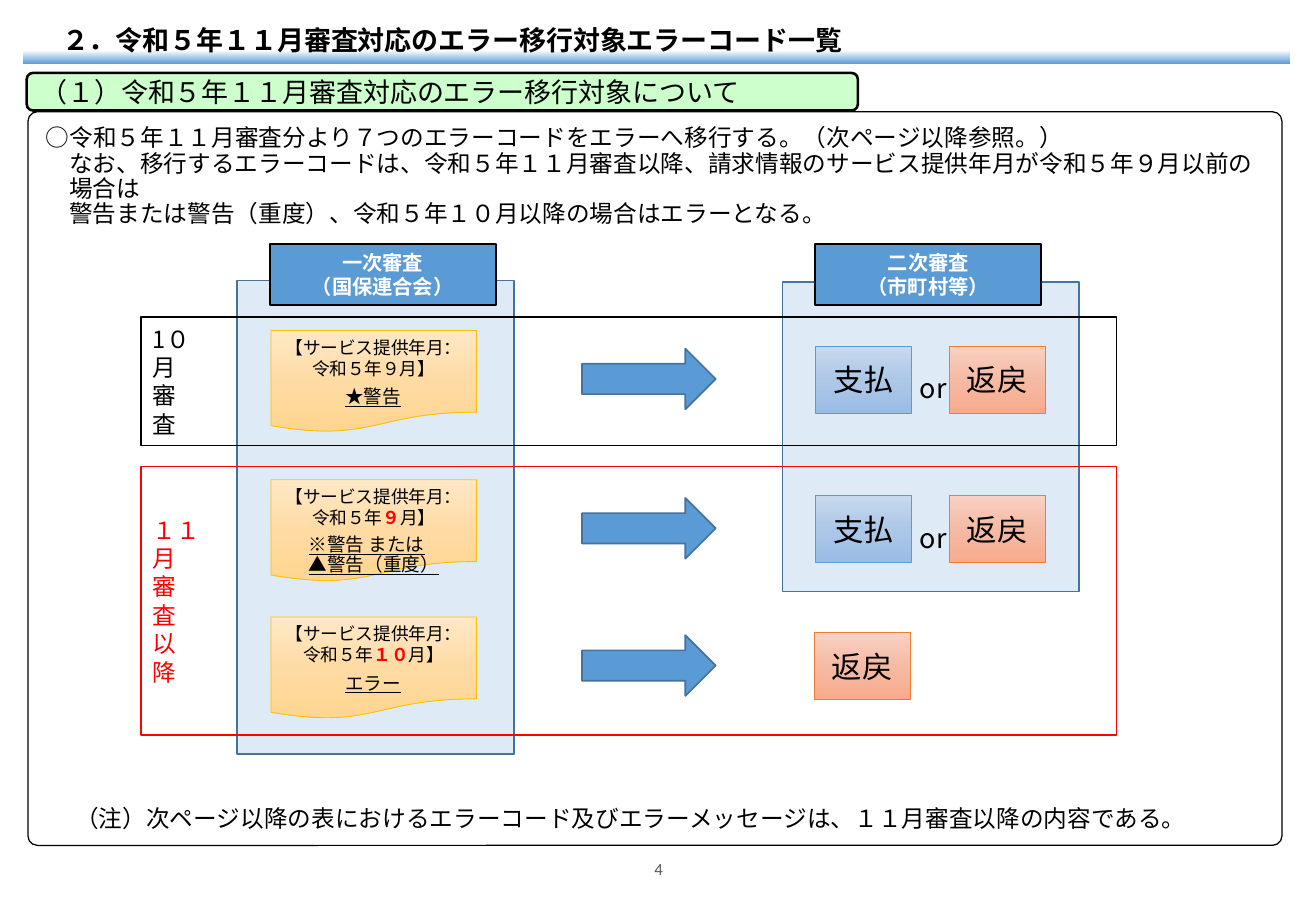
from copy import deepcopy
from dataclasses import dataclass, replace
from typing import Optional, Union

from lxml.etree import SubElement
from pptx import Presentation
from pptx.dml.color import RGBColor
from pptx.enum.shapes import MSO_SHAPE
from pptx.enum.text import MSO_ANCHOR, MSO_AUTO_SIZE, PP_ALIGN
from pptx.oxml.ns import qn
from pptx.util import Inches, Pt

CJK = "Noto Sans CJK JP"
RED = "FF0000"
SKY = "5B9BD5"
EDGE = "43739E"
PALE = "DEEBF7"
GOLD = ((0, "FFE8C7"), (50, "FFDBA4"), (100, "FFD58F"))
BLUE = ((0, "C7D9EE"), (50, "ADC7E7"), (100, "9ABDE5"))
ROSE = ((0, "F9D1C3"), (50, "F5BAA4"), (100, "F7AB8D"))
BAND = ((1, SKY), (29, "FFFFFF"), (100, "FFFFFF"))

Line = Union[str, tuple[str, ...]]
Fill = Union[str, tuple, None]


@dataclass(frozen=True)
class Style:
    """Look of a text block."""
    size: float
    font: str = CJK
    color: str = "000000"
    bold: bool = False
    under: bool = False
    align: PP_ALIGN = PP_ALIGN.LEFT
    anchor: MSO_ANCHOR = MSO_ANCHOR.MIDDLE
    pitch: Optional[float] = None
    tight: bool = False


@dataclass(frozen=True)
class Box:
    """Place of a shape in inches."""
    left: float
    top: float
    width: float
    height: float


@dataclass(frozen=True)
class Case:
    """One flow from a claim sheet to its outcome."""
    top: float
    month: Line
    notes: tuple[str, ...]
    paid: bool


@dataclass(frozen=True)
class Stage:
    """One review column with its heading."""
    head: float
    lines: tuple[str, str]
    panel: Box


@dataclass(frozen=True)
class Frame:
    """Outlined group of flows with a label set downwards."""
    box: Box
    color: str
    label: tuple[str, ...]


MID = PP_ALIGN.CENTER
BODY = Style(14, anchor=MSO_ANCHOR.TOP, pitch=15)
HEAD = Style(12, color="FFFFFF", bold=True, align=MID)
SHEET = Style(10.5, align=MID, anchor=MSO_ANCHOR.TOP)
NOTE = Style(11, under=True, align=MID, tight=True)
CHIP = Style(18, "Calibri", align=MID)

STAGES = (
    Stage(2.22, ("一次審査", "（国保連合会）"), Box(1.95, 2.31, 2.28, 3.9)),
    Stage(6.71, ("二次審査", "（市町村等）"), Box(6.44, 2.32, 2.44, 2.55)),
)
CASES = (
    Case(2.72, "令和５年９月】", ("★警告",), True),
    Case(3.95, ("令和５年", "９", "月】"), ("※警告 または", "▲警告（重度）"), True),
    Case(5.08, ("令和５年", "１０", "月】"), ("エラー",), False),
)
FRAMES = (
    Frame(Box(1.16, 2.61, 8.03, 1.06), "000000", ("1０", "月", "審", "査")),
    Frame(Box(1.16, 3.84, 8.03, 2.21), RED, ("１１", "月", "審", "査", "以", "降")),
)


def hue(code: str) -> RGBColor:
    """Turn a hex string into a colour."""
    return RGBColor.from_string(code)


def place(box: Box) -> tuple:
    """Give the box as slide lengths."""
    return tuple(Inches(n) for n in (box.left, box.top, box.width, box.height))


def paint(shape, fill: Fill, angle: float = 270) -> None:
    """Fill a shape with nothing, one colour or a gradient."""
    if fill is None:
        shape.fill.background()
    elif isinstance(fill, str):
        shape.fill.solid()
        shape.fill.fore_color.rgb = hue(fill)
    else:
        shape.fill.gradient()
        shape.fill.gradient_angle = angle
        stops = shape._element.spPr.find(".//" + qn("a:gsLst"))
        stops.append(deepcopy(stops[0]))
        for stop, (spot, code) in zip(shape.fill.gradient_stops, fill):
            stop.position = spot / 100
            stop.color.rgb = hue(code)


def write(shape, lines: tuple[Line, ...], style: Style) -> None:
    """Set lines of text; every second run of a split line is bold red."""
    frame = shape.text_frame
    frame.word_wrap = True
    frame.auto_size = MSO_AUTO_SIZE.NONE
    frame.vertical_anchor = style.anchor
    side, edge = (0.04, 0.04) if style.tight else (0.1, 0.05)
    frame.margin_left = frame.margin_right = Inches(side)
    frame.margin_top = frame.margin_bottom = Inches(edge)
    for row, line in enumerate(lines):
        para = frame.add_paragraph() if row else frame.paragraphs[0]
        para.alignment = style.align
        if style.pitch:
            para.line_spacing = Pt(style.pitch)
        for spot, text in enumerate((line,) if isinstance(line, str) else line):
            mark = spot % 2 == 1
            run = para.add_run()
            run.text = text
            font = run.font
            font.size = Pt(style.size)
            font.bold = style.bold or mark
            font.underline = style.under
            font.color.rgb = hue(RED if mark else style.color)
            font.name = style.font
            SubElement(font._element, qn("a:ea")).set("typeface", CJK)


def indent(para, width: float) -> None:
    """Shift a paragraph to the right."""
    props = para._p.get_or_add_pPr()
    props.set("marL", str(Inches(width)))
    props.set("indent", "0")


def draw(slide, kind: MSO_SHAPE, box: Box, fill: Fill, line: str, width: float = 1):
    """Add a preset shape."""
    shape = slide.shapes.add_shape(kind, *place(box))
    shape.shadow.inherit = False
    paint(shape, fill)
    shape.line.color.rgb = hue(line)
    shape.line.width = Pt(width)
    return shape


def label(slide, box: Box, lines: tuple[Line, ...], style: Style):
    """Add a text box."""
    shape = slide.shapes.add_textbox(*place(box))
    write(shape, lines, style)
    return shape


def chip(slide, left: float, top: float, text: str, fill: Fill, line: str) -> None:
    """Add an outcome tile."""
    tile = draw(slide, MSO_SHAPE.RECTANGLE, Box(left, top, 0.79, 0.55), fill, line, 0.5)
    write(tile, (text,), CHIP)


def flow(slide, case: Case) -> None:
    """Draw a claim sheet, its arrow and its outcome."""
    top = case.top
    sheet = draw(slide, MSO_SHAPE.FLOWCHART_DOCUMENT, Box(2.23, top, 1.69, 0.84), GOLD, "FFC000", 0.5)
    write(sheet, ("【サービス提供年月：", case.month), SHEET)
    if len(case.notes) > 1:
        style = replace(NOTE, align=PP_ALIGN.LEFT, pitch=12)
        label(slide, Box(2.5, top + 0.41, 1.18, 0.42), case.notes, style)
    else:
        label(slide, Box(2.71, top + 0.41, 0.72, 0.26), case.notes, NOTE)
    draw(slide, MSO_SHAPE.RIGHT_ARROW, Box(4.79, top + 0.15, 1.1, 0.5), SKY, EDGE)
    if case.paid:
        chip(slide, 6.71, top + 0.13, "支払", BLUE, SKY)
        label(slide, Box(7.32, top + 0.3, 0.72, 0.35), ("or",), Style(16, align=MID, tight=True))
    chip(slide, 7.81 if case.paid else 6.7, top + 0.13, "返戻", ROSE, "ED7D31")


def main() -> None:
    """Build the slide and save it."""
    deck = Presentation()
    deck.slide_width, deck.slide_height = Inches(10.83), Inches(7.5)
    slide = deck.slides.add_slide(deck.slide_layouts[5])

    title = slide.shapes.title
    title.left, title.top, title.width, title.height = place(Box(0.19, 0.13, 10.43, 0.4))
    paint(title, BAND, 90)
    write(title, ("２．令和５年１１月審査対応のエラー移行対象エラーコード一覧",), Style(16, "Arial", bold=True))
    indent(title.text_frame.paragraphs[0], 0.22)

    panel = draw(slide, MSO_SHAPE.ROUNDED_RECTANGLE, Box(0.23, 0.92, 10.32, 6.04), None, "000000", 0.75)
    panel.adjustments[0] = 0.013
    intro = label(slide, Box(0.28, 0.99, 10.31, 0.73), (
        "○令和５年１１月審査分より７つのエラーコードをエラーへ移行する。（次ページ以降参照。）",
        "なお、移行するエラーコードは、令和５年１１月審査以降、請求情報のサービス提供年月が令和５年９月以前の場合は",
        "警告または警告（重度）、令和５年１０月以降の場合はエラーとなる。",
    ), BODY)
    for para in intro.text_frame.paragraphs[1:]:
        indent(para, 0.19)
    topic = draw(slide, MSO_SHAPE.ROUNDED_RECTANGLE, Box(0.22, 0.6, 6.84, 0.31), "CCFFCC", "000000", 1.5)
    write(topic, ("（１）令和５年１１月審査対応のエラー移行対象について",), Style(16, "Calibri"))

    for stage in STAGES:
        draw(slide, MSO_SHAPE.RECTANGLE, stage.panel, PALE, EDGE)
        head = draw(slide, MSO_SHAPE.RECTANGLE, Box(stage.head, 2.01, 1.86, 0.5), SKY, "000000")
        write(head, stage.lines, HEAD)
    for case in CASES:
        flow(slide, case)
    for frame in FRAMES:
        group = draw(slide, MSO_SHAPE.RECTANGLE, frame.box, None, frame.color)
        write(group, frame.label, Style(14, color=frame.color))

    label(slide, Box(0.52, 6.59, 10.31, 0.31), (
        "（注）次ページ以降の表におけるエラーコード及びエラーメッセージは、１１月審査以降の内容である。",
    ), BODY)
    label(slide, Box(3.59, 6.95, 3.66, 0.4), ("4",), Style(10, "Calibri", "595959", align=MID))
    deck.save("out.pptx")


if __name__ == "__main__":
    main()
